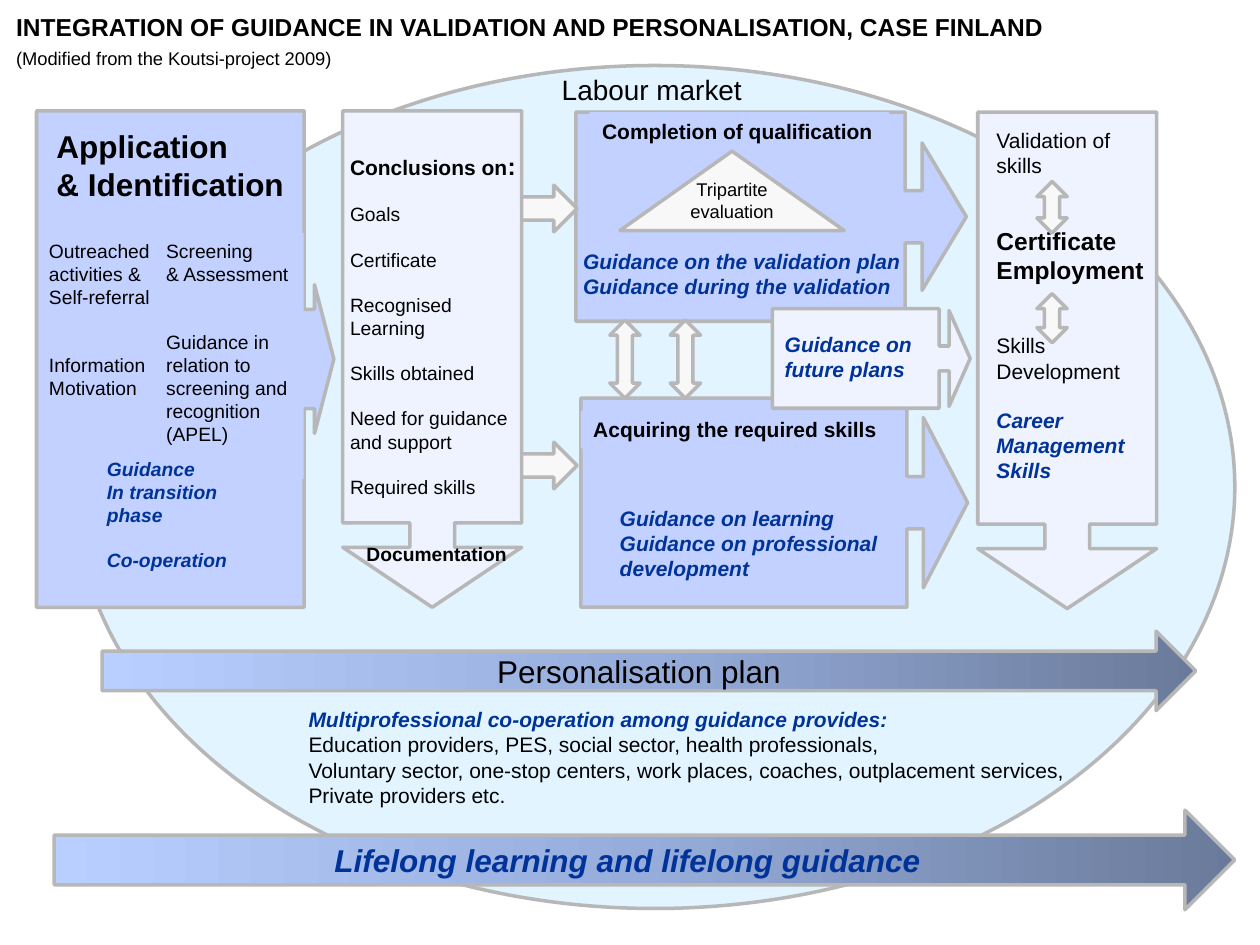
from copy import deepcopy
from pptx import Presentation
from pptx.util import Inches, Pt
from pptx.dml.color import RGBColor as RGB
from pptx.oxml.ns import qn
from pptx.enum.shapes import MSO_SHAPE as Kind
from pptx.enum.text import MSO_ANCHOR as Anchor, MSO_AUTO_SIZE as Auto, PP_ALIGN as Align

HEX = {
    "sky": "E1F4FF", "blue": "C2D1FF", "pale": "EFF3FF", "grey": "F8F8F8",
    "edge": "B7B7B7", "ink": "000000", "navy": "003399",
    "dark": "6A7A9A", "mid": "96ADDB", "light": "B8CFFF",
}
STYLES = {
    "plain": ("ink", False, False),
    "bold": ("ink", True, False),
    "guide": ("navy", True, True),
}
GAP, WIDE = 12.65, 13.8


def color(name):
    return RGB.from_string(HEX[name])


def write(frame, groups, align=Align.LEFT):
    first = True
    for gap, size, style, text in groups:
        tint, bold, slant = STYLES[style]
        for row, line in enumerate(text.split("\n")):
            para = frame.paragraphs[0] if first else frame.add_paragraph()
            first = False
            para.text = line
            para.alignment = align
            if gap and row == 0:
                para.space_before = Pt(gap)
            font = para.font
            font.name, font.size = "Arial", Pt(size)
            font.bold, font.italic = bold, slant
            font.color.rgb = color(tint)


def form(slide, kind, at, fill, adj=(), edge=True):
    shape = slide.shapes.add_shape(kind, *map(Inches, at))
    shape.shadow.inherit = False
    if fill:
        shape.fill.solid()
        shape.fill.fore_color.rgb = color(fill)
    if edge:
        shape.line.color.rgb = color("edge")
        shape.line.width = Pt(2)
    else:
        shape.line.fill.background()
    for spot, value in enumerate(adj):
        shape.adjustments[spot] = value
    return shape


def label(slide, at, groups, fill=None, wrap=False):
    if fill:
        box = form(slide, Kind.RECTANGLE, at, fill, edge=False)
    else:
        box = slide.shapes.add_textbox(*map(Inches, at))
    frame = box.text_frame
    frame.word_wrap = wrap
    frame.auto_size = Auto.SHAPE_TO_FIT_TEXT
    frame.vertical_anchor = Anchor.TOP
    write(frame, groups)
    return frame


def center(shape, group):
    frame = shape.text_frame
    frame.word_wrap = True
    frame.vertical_anchor = Anchor.MIDDLE
    write(frame, [group], Align.CENTER)
    return frame


def banner(slide, at, group):
    shape = form(slide, Kind.RIGHT_ARROW, at, None)
    shape.fill.gradient()
    shape.fill.gradient_angle = 180
    stops = shape._element.spPr.find(".//" + qn("a:gsLst"))
    stops.append(deepcopy(stops[0]))
    for stop, place, name in zip(shape.fill.gradient_stops, (0, 0.5, 1), ("dark", "mid", "light")):
        stop.position = place
        stop.color.rgb = color(name)
    center(shape, group)


def column(slide, left, top):
    form(slide, Kind.DOWN_ARROW_CALLOUT, (left, top, 1.42, 3.94), "pale", (0.25, 0.5, 0.335, 0.83))


def intake(slide):
    form(slide, Kind.RIGHT_ARROW_CALLOUT, (0.29, 0.88, 2.36, 3.94), "blue", (0.334, 0.25, 0.065, 0.9))
    label(slide, (0.35, 0.96, 2.03, 0.71), [(0, 18, "bold", "Application\n& Identification")], "blue")
    label(slide, (0.29, 1.85, 1.01, 1.4), [
        (0, 11, "plain", "Outreached\nactivities &\nSelf-referral"),
        (2 * GAP, 11, "plain", "Information\nMotivation"),
    ])
    label(slide, (1.22, 1.85, 1.19, 1.95), [
        (0, 11, "plain", "Screening\n& Assessment"),
        (2 * GAP, 11, "plain", "Guidance in\nrelation to \vscreening and\nrecognition\n(APEL)"),
    ], "blue")
    label(slide, (0.75, 3.58, 1.25, 1.03), [
        (0, 11, "guide", "Guidance\nIn transition\nphase"),
        (GAP, 11, "guide", "Co-operation"),
    ], "blue", True)


def outcome(slide):
    column(slide, 7.76, 0.89)
    label(slide, (7.81, 0.96, 1.38, 3), [
        (0, 12, "plain", "Validation of\nskills"),
        (2 * WIDE, 14, "bold", "Certificate\nEmployment"),
        (2 * WIDE, 12, "plain", "Skills\nDevelopment"),
        (WIDE, 12, "guide", "Career\nManagement\nSkills"),
    ])
    for top, high in ((1.44, 0.41), (2.33, 0.39)):
        form(slide, Kind.UP_DOWN_ARROW, (8.23, top, 0.24, high), "grey")


def paths(slide):
    form(slide, Kind.RIGHT_ARROW_CALLOUT, (4.57, 0.89, 3.1, 1.66), "blue", (0.25, 0.352, 0.212, 0.843))
    label(slide, (4.68, 0.89, 2.38, 0.3), [(0, 12, "bold", "Completion of qualification")], "blue")
    label(slide, (4.53, 1.92, 2.83, 0.5), [
        (0, 12, "guide", "Guidance on the validation plan\nGuidance during the validation"),
    ], wrap=True)
    peak = form(slide, Kind.ISOSCELES_TRIANGLE, (4.92, 1.2, 1.78, 0.63), "grey")
    center(peak, (0, 10.5, "plain", "Tripartite evaluation")).margin_bottom = Inches(0.22)
    for left in (4.84, 5.32):
        form(slide, Kind.UP_DOWN_ARROW, (left, 2.54, 0.24, 0.62), "grey")
    form(slide, Kind.RIGHT_ARROW_CALLOUT, (4.61, 3.16, 3.07, 1.66), "blue", (0.25, 0.407, 0.212, 0.843))
    label(slide, (4.61, 3.26, 2.48, 0.3), [(0, 12, "bold", "Acquiring the required skills")], "blue")
    label(slide, (4.82, 3.96, 2.32, 0.71), [
        (0, 12, "guide", "Guidance on learning\nGuidance on professional\ndevelopment"),
    ], "blue")
    for top in (3.51, 1.47):
        form(slide, Kind.RIGHT_ARROW, (4.06, top, 0.52, 0.37), "grey")


def findings(slide):
    column(slide, 2.72, 0.88)
    items = ("Goals", "Certificate", "Recognised\nLearning", "Skills obtained",
             "Need for guidance\nand support", "Required skills")
    frame = label(slide, (2.68, 1.15, 1.53, 3.48), [
        (0, 12, "bold", "Conclusions on"),
        *((GAP, 11, "plain", item) for item in items),
        (2 * GAP, 11, "bold", "Documentation"),
    ])
    colon = frame.paragraphs[0].add_run()
    colon.text = ":"
    colon.font.size = Pt(14)
    frame.paragraphs[-1]._p.get_or_add_pPr().set("marL", str(Inches(0.13)))


def main():
    deck = Presentation()
    deck.slide_width, deck.slide_height = Inches(10), Inches(7.5)
    slide = deck.slides.add_slide(deck.slide_layouts[6])
    form(slide, Kind.OVAL, (0.59, 0.52, 9.21, 6.69), "sky")
    label(slide, (4.36, 0.53, 1.98, 0.47), [(0, 16, "plain", "Labour market")], wrap=True)
    intake(slide)
    outcome(slide)
    paths(slide)
    findings(slide)
    banner(slide, (0.81, 5.01, 8.68, 0.63), (0, 18, "plain", "Personalisation plan"))
    banner(slide, (0.43, 6.43, 9.37, 0.79), (0, 18, "guide", "Lifelong learning and lifelong guidance "))
    label(slide, (2.35, 5.56, 6.35, 0.91), [
        (0, 12, "guide", "Multiprofessional co-operation among guidance provides:"),
        (0, 12, "plain", "Education providers, PES, social sector, health professionals,\n"
         "Voluntary sector, one-stop centers, work places, coaches, outplacement services,\n"
         "Private providers etc."),
    ], wrap=True)
    label(slide, (0.03, 0.05, 9.62, 0.57), [
        (0, 14, "bold", "INTEGRATION OF GUIDANCE IN VALIDATION AND PERSONALISATION, CASE FINLAND"),
        (3, 10.5, "plain", "(Modified from the Koutsi-project 2009)"),
    ], wrap=True)
    form(slide, Kind.RIGHT_ARROW_CALLOUT, (6.13, 2.45, 1.57, 0.79), "pale", (0.25, 0.482, 0.212, 0.843))
    label(slide, (6.13, 2.58, 1.44, 0.5), [(0, 12, "guide", "Guidance on\nfuture plans")], wrap=True)
    deck.save("out.pptx")


if __name__ == "__main__":
    main()
